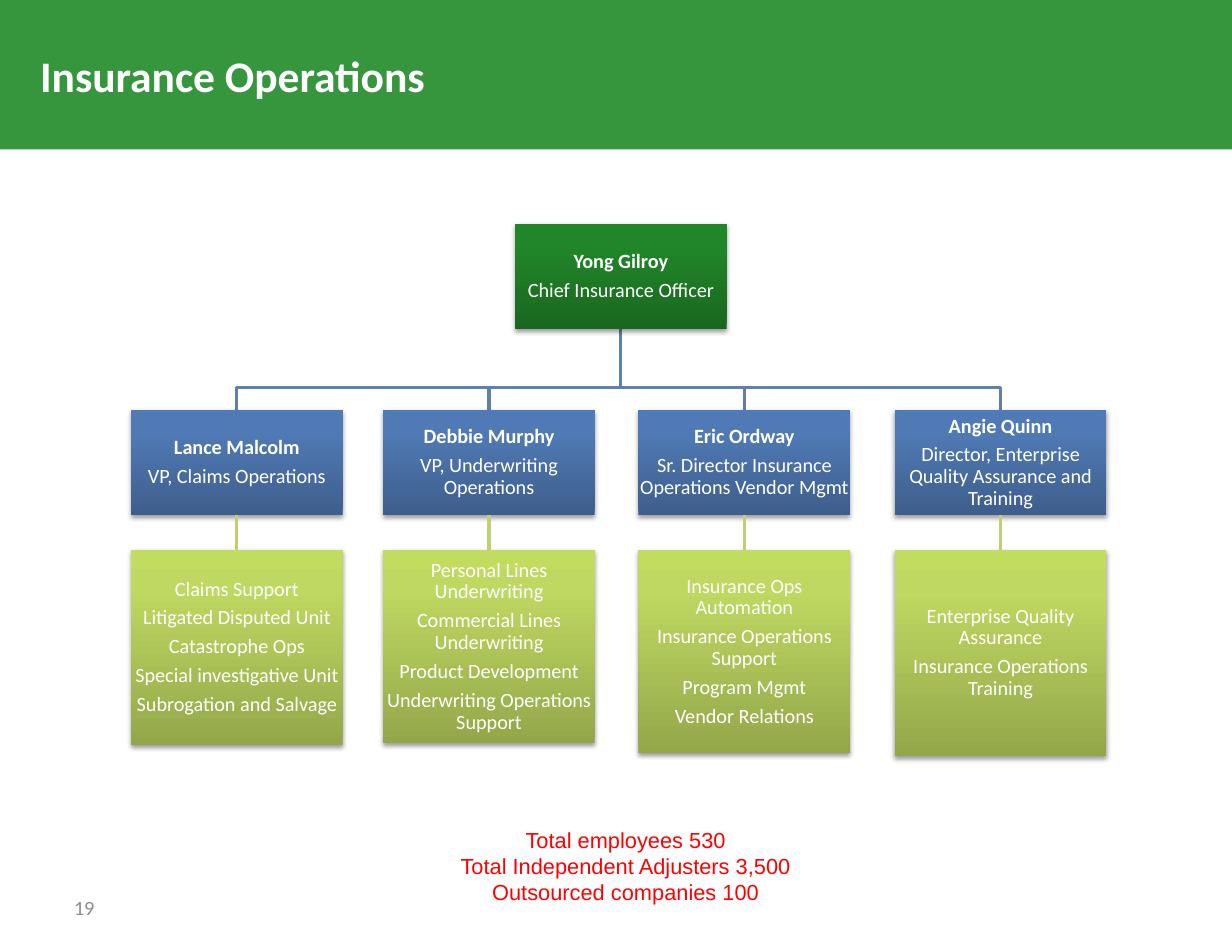
from copy import deepcopy
from dataclasses import dataclass

from lxml.etree import SubElement
from pptx import Presentation
from pptx.dml.color import RGBColor as RGB
from pptx.enum.shapes import MSO_CONNECTOR as LINK, MSO_SHAPE as SHAPE
from pptx.enum.text import MSO_ANCHOR as ANCHOR, PP_ALIGN as ALIGN
from pptx.oxml.ns import qn
from pptx.util import Cm, Pt


@dataclass(frozen=True)
class Theme:
    band: str = "36963D"
    white: str = "FFFFFF"
    grey: str = "8C8C8C"
    red: str = "FF0000"
    wire: str = "5F80AF"
    stem: str = "BDD172"
    chief: tuple = ("19671F", "218629", "1F8827")
    lead: tuple = ("3E5E8C", "507AB5", "4F7AB8")
    unit: tuple = ("93A74A", "BFD861", "C1DC5F")
    stops: tuple = (0, 0.8, 1)
    head: int = 28
    body: int = 13
    note: int = 14
    font: str = "Calibri"
    sans: str = "Arial"


T = Theme()
WIDE, TALL = 27.94, 21.59
BOX_W, BOX_H = 4.8, 2.39
BUS, LEAD_TOP, UNIT_TOP = 8.79, 9.3, 12.47
CHIEF = (11.68, 5.08)

# left edge, name, role, height of the unit box, units
TEAMS = [
    (2.97, "Lance Malcolm", "VP, Claims Operations", 4.42,
     ["Claims Support", "Litigated Disputed Unit", "Catastrophe Ops",
      "Special investigative Unit", "Subrogation and Salvage"]),
    (8.69, "Debbie Murphy", "VP, Underwriting Operations", 4.39,
     ["Personal Lines Underwriting", "Commercial Lines Underwriting",
      "Product Development", "Underwriting Operations Support"]),
    (14.48, "Eric Ordway", "Sr. Director Insurance Operations Vendor Mgmt", 4.62,
     ["Insurance Ops Automation", "Insurance Operations Support",
      "Program Mgmt", "Vendor Relations"]),
    (20.29, "Angie Quinn", "Director, Enterprise Quality Assurance and Training", 4.67,
     ["Enterprise Quality Assurance", "Insurance Operations Training"]),
]
TOTALS = ["Total employees 530", "Total Independent Adjusters 3,500",
          "Outsourced companies 100"]


def color(code):
    return RGB.from_string(code)


def write(frame, lines, size, code, font=T.font, align=ALIGN.CENTER):
    """Fill the frame with one paragraph a line and return the paragraphs."""
    frame.word_wrap = True
    frame.text = "\n".join(lines)
    for par in frame.paragraphs:
        par.alignment = align
        par.font.name, par.font.size = font, Pt(size)
        par.font.color.rgb = color(code)
    return frame.paragraphs


def shade(shape, codes):
    """Give the shape a gradient that rises from its foot to its top."""
    shape.fill.gradient()
    shape.fill.gradient_angle = 90
    stops = shape.element.spPr.find(qn("a:gradFill")).find(qn("a:gsLst"))
    stops.append(deepcopy(stops[-1]))
    for stop, spot, code in zip(shape.fill.gradient_stops, T.stops, codes):
        stop.position = spot
        stop.color.rgb = color(code)


def drop_shadow(shape):
    shape.shadow.inherit = False
    effects = shape.element.spPr.find(qn("a:effectLst"))
    outer = SubElement(effects, qn("a:outerShdw"), blurRad=str(Pt(3.1)),
                       dist=str(Pt(1.7)), dir="5400000", rotWithShape="0")
    black = SubElement(outer, qn("a:srgbClr"), val="000000")
    SubElement(black, qn("a:alpha"), val="38000")


def add_card(slide, box, codes, lines, named=True):
    card = slide.shapes.add_shape(SHAPE.RECTANGLE, *map(Cm, box))
    shade(card, codes)
    card.line.fill.background()
    drop_shadow(card)
    frame = card.text_frame
    frame.vertical_anchor = ANCHOR.MIDDLE
    frame.margin_left = frame.margin_right = Cm(0.02)
    frame.margin_top = frame.margin_bottom = Cm(0.02)
    pars = write(frame, lines, T.body, T.white)
    for par in pars:
        par.line_spacing = 0.9
        par.space_after = Pt(4.5)
    pars[0].font.bold = named
    return card


def add_wire(slide, start, end):
    """Draw the bent line from the chief down to one lead."""
    (x, y), (to_x, to_y) = start, end
    pen = slide.shapes.build_freeform(Cm(x), Cm(y))
    pen.add_line_segments([(Cm(a), Cm(b)) for a, b in
                           ((x, BUS), (to_x, BUS), (to_x, to_y))], close=False)
    wire = pen.convert_to_shape()
    wire.fill.background()
    wire.line.color.rgb = color(T.wire)
    wire.line.width = Pt(2)
    wire.shadow.inherit = False


def add_stem(slide, lead, unit):
    stem = slide.shapes.add_connector(LINK.STRAIGHT, 0, 0, 0, 0)
    stem.begin_connect(lead, 2)
    stem.end_connect(unit, 0)
    stem.line.color.rgb = color(T.stem)
    stem.line.width = Pt(2)
    SubElement(stem.element.spPr, qn("a:effectLst"))


def add_title(slide, box, text):
    title = slide.shapes.title
    title.left, title.top, title.width, title.height = map(Cm, box)
    title.fill.solid()
    title.fill.fore_color.rgb = color(T.band)
    frame = title.text_frame
    frame.vertical_anchor = ANCHOR.MIDDLE
    frame.margin_left = Cm(0.91)
    write(frame, [text], T.head, T.white, align=ALIGN.LEFT)[0].font.bold = True


def add_chart_tree(slide, box):
    """Draw the chief, the leads and their units from the box's corner."""
    left, top = box
    start = (left + BOX_W / 2, top + BOX_H)
    for x, *_ in TEAMS:
        add_wire(slide, start, (x + BOX_W / 2, LEAD_TOP))
    add_card(slide, (left, top, BOX_W, BOX_H), T.chief,
             ["Yong Gilroy", "Chief Insurance Officer"])
    for x, name, role, high, units in TEAMS:
        lead = add_card(slide, (x, LEAD_TOP, BOX_W, BOX_H), T.lead, [name, role])
        unit = add_card(slide, (x, UNIT_TOP, BOX_W, high), T.unit, units, False)
        add_stem(slide, lead, unit)


def add_totals(slide, box):
    note = slide.shapes.add_textbox(*map(Cm, box))
    write(note.text_frame, TOTALS, T.note, T.red, T.sans)


def add_number(slide, box, text):
    page = slide.shapes.add_textbox(*map(Cm, box))
    frame = page.text_frame
    frame.vertical_anchor = ANCHOR.MIDDLE
    frame.margin_left = frame.margin_right = Cm(0.28)
    write(frame, [text], T.body, T.grey, align=ALIGN.LEFT)


def main():
    deck = Presentation()
    deck.slide_width, deck.slide_height = Cm(WIDE), Cm(TALL)
    slide = deck.slides.add_slide(deck.slide_layouts[5])
    add_title(slide, (0, 0, WIDE, 3.39), "Insurance Operations")
    add_chart_tree(slide, CHIEF)
    add_totals(slide, (9.96, 18.62, 8.46, 2.06))
    add_number(slide, (1.4, 20.02, 6.53, 1.14), "19")
    deck.save("out.pptx")


if __name__ == "__main__":
    main()
